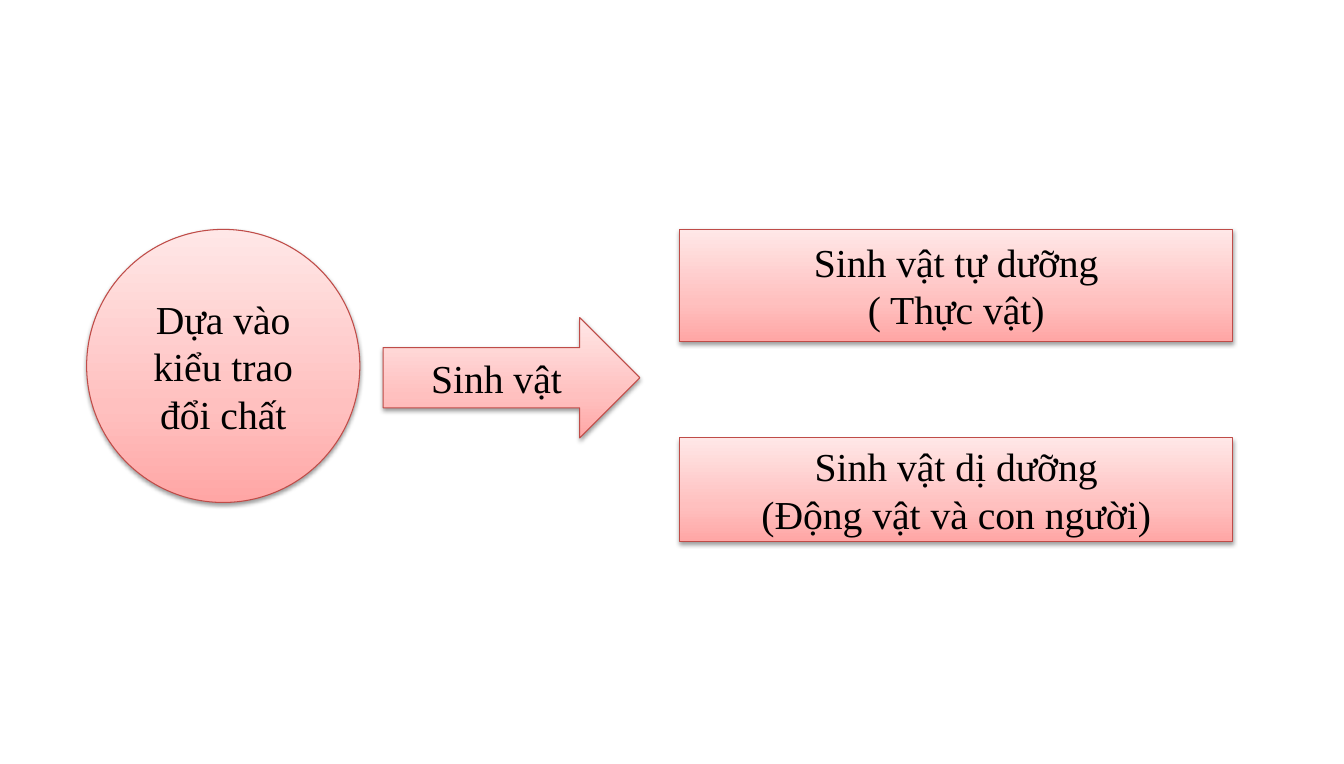
from dataclasses import dataclass

import lxml.etree
import pptx
import pptx.dml.color
import pptx.enum.shapes
import pptx.enum.text
import pptx.oxml.ns
import pptx.shapes.autoshape
import pptx.slide
import pptx.util
from copy import deepcopy

Cm = pptx.util.Cm
RGBColor = pptx.dml.color.RGBColor
MSO_SHAPE = pptx.enum.shapes.MSO_SHAPE
qn = pptx.oxml.ns.qn

BLACK = RGBColor(0x00, 0x00, 0x00)
OUTLINE = RGBColor(0xBF, 0x4C, 0x48)
GRADIENT = (
    (0, RGBColor(0xFF, 0xA6, 0xA5)),
    (0.35, RGBColor(0xFF, 0xC0, 0xBF)),
    (1, RGBColor(0xFF, 0xE7, 0xE7)),
)
FONT = "Times New Roman"
TOP = 5.72
BOX_LEFT = 16.94
BOX_WIDTH = 13.79


@dataclass(frozen=True)
class Node:
    kind: MSO_SHAPE
    left: float
    top: float
    width: float
    height: float
    text: str


NODES = (
    Node(MSO_SHAPE.OVAL, 2.16, TOP, 6.81, 6.81, "Dựa vào kiểu trao đổi chất"),
    Node(MSO_SHAPE.RIGHT_ARROW, 9.55, 7.92, 6.4, 3, "Sinh vật"),
    Node(MSO_SHAPE.RECTANGLE, BOX_LEFT, TOP, BOX_WIDTH, 2.79,
         "Sinh vật tự dưỡng\n( Thực vật)"),
    Node(MSO_SHAPE.RECTANGLE, BOX_LEFT, 10.92, BOX_WIDTH, 2.59,
         "Sinh vật dị dưỡng\n(Động vật và con người)"),
)


def fill_gradient(sp: pptx.shapes.autoshape.Shape) -> None:
    sp.fill.gradient()
    sp.fill.gradient_angle = 90
    stops = next(sp.element.iter(qn("a:gsLst")))
    stops.append(deepcopy(stops[-1]))
    for stop, (position, color) in zip(sp.fill.gradient_stops, GRADIENT):
        stop.position = position
        stop.color.rgb = color


def add_shadow(sp: pptx.shapes.autoshape.Shape) -> None:
    sp.shadow.inherit = False
    effects = next(sp.element.iter(qn("a:effectLst")))
    shadow = lxml.etree.SubElement(
        effects, qn("a:outerShdw"),
        blurRad="40000", dist="20000", dir="5400000", rotWithShape="0")
    color = lxml.etree.SubElement(shadow, qn("a:srgbClr"), val=str(BLACK))
    lxml.etree.SubElement(color, qn("a:alpha"), val="38000")


def write_text(sp: pptx.shapes.autoshape.Shape, text: str) -> None:
    tf = sp.text_frame
    tf.word_wrap = True
    tf.vertical_anchor = pptx.enum.text.MSO_ANCHOR.MIDDLE
    tf.text = text
    for p in tf.paragraphs:
        p.alignment = pptx.enum.text.PP_ALIGN.CENTER
        for r in p.runs:
            r.font.name = FONT
            r.font.size = pptx.util.Pt(28)
            r.font.color.rgb = BLACK


def draw_node(s: pptx.slide.Slide, node: Node) -> None:
    sp = s.shapes.add_shape(node.kind, Cm(node.left), Cm(node.top),
                            Cm(node.width), Cm(node.height))
    fill_gradient(sp)
    sp.line.color.rgb = OUTLINE
    sp.line.width = pptx.util.Pt(0.75)
    add_shadow(sp)
    write_text(sp, node.text)


def main() -> None:
    prs = pptx.Presentation()
    prs.slide_width = Cm(33.5)
    prs.slide_height = Cm(19.05)
    s = prs.slides.add_slide(prs.slide_layouts[6])
    for node in NODES:
        draw_node(s, node)
    prs.save("out.pptx")


if __name__ == "__main__":
    main()
